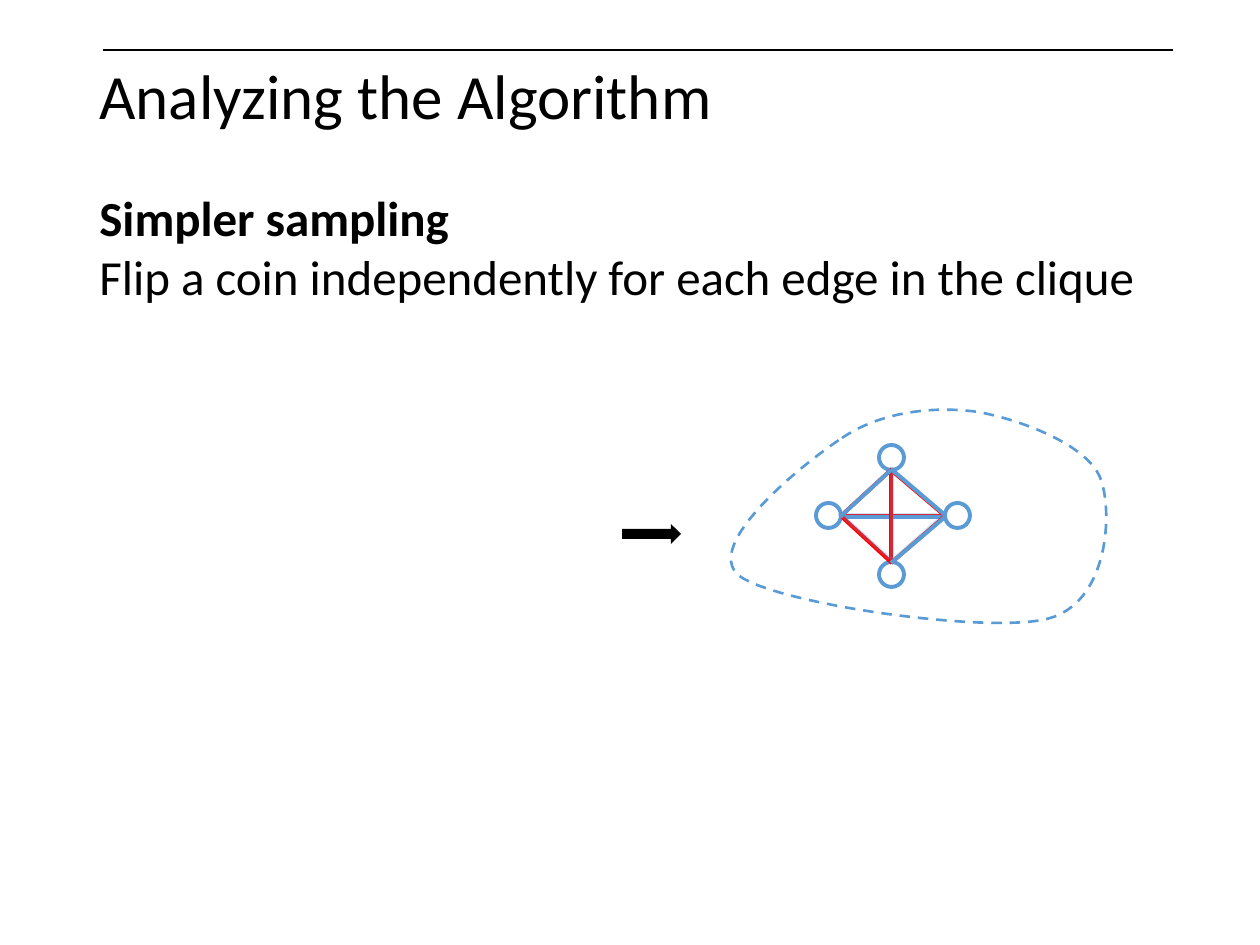
import dataclasses
import typing

import lxml.etree
import pptx
import pptx.dml.color
import pptx.enum.dml
import pptx.enum.shapes
import pptx.enum.text
import pptx.oxml.ns
import pptx.util

EMU_PER_PX = 914400 / 126
BLACK, WHITE, RED, BLUE = "000000", "FFFFFF", "FF0000", "5B9BD5"
NODE_SIZE = 25

Point = tuple[int, int]


@dataclasses.dataclass
class Edge:
    start: Point
    end: Point
    colour: str = BLUE
    opacity: int = 100
    width: float = 2.25


@dataclasses.dataclass
class TextLine:
    text: str
    size: int
    bold: bool = False
    spacing: float = 1.0


RULE = Edge((103, 50), (1173, 50), BLACK, width=1)
HORIZONTAL_EDGES = [
    Edge((840, 516), (944, 516), RED),
    Edge((839, 515), (942, 515), opacity=25),
    Edge((842, 517), (945, 517)),
]
NODES = [(879, 445), (816, 503), (945, 503), (879, 562)]
SAMPLED_EDGES = [
    Edge((842, 517), (892, 563), RED),
    Edge((944, 517), (891, 563), RED),
    Edge((891, 470), (891, 563), RED),
    Edge((944, 515), (891, 470), RED),
]
CLIQUE_EDGES = [
    Edge((892, 469), (842, 515), RED),
    Edge((839, 513), (890, 559), opacity=25),
    Edge((944, 515), (891, 562), opacity=25),
    Edge((892, 467), (892, 559), opacity=25),
    Edge((945, 515), (892, 469), opacity=25),
    Edge((891, 470), (840, 517), opacity=25),
    Edge((945, 517), (891, 563)),
    Edge((945, 515), (891, 469)),
    Edge((891, 470), (840, 517)),
]
REGION_START = (842, 438)
REGION_CURVES = [
    ((882, 411), (935, 406), (978, 412)),
    ((1022, 420), (1090, 446), (1101, 480)),
    ((1113, 514), (1108, 604), (1047, 619)),
    ((987, 634), (774, 604), (738, 575)),
    ((704, 544), (801, 465), REGION_START),
]


def px(value: float) -> int:
    """Turn px into EMU."""
    return round(value * EMU_PER_PX)


def rgb(colour: str) -> pptx.dml.color.RGBColor:
    """Turn a hex string into a colour."""
    return pptx.dml.color.RGBColor.from_string(colour)


def add_edge(slide: typing.Any, edge: Edge) -> None:
    """Draw a straight line, translucent if its opacity is below 100."""
    line = slide.shapes.add_connector(
        pptx.enum.shapes.MSO_CONNECTOR.STRAIGHT,
        *map(px, edge.start + edge.end),
    )
    line.line.color.rgb = rgb(edge.colour)
    line.line.width = pptx.util.Pt(edge.width)
    properties = line._element.spPr
    if edge.opacity < 100:
        colour = properties.find(".//" + pptx.oxml.ns.qn("a:srgbClr"))
        alpha = lxml.etree.SubElement(colour, pptx.oxml.ns.qn("a:alpha"))
        alpha.set("val", str(edge.opacity * 1000))
    lxml.etree.SubElement(properties, pptx.oxml.ns.qn("a:effectLst"))


def add_filled(slide: typing.Any, kind: typing.Any, at: tuple[int, int, int, int],
               fill: str, outline: str | None = None) -> None:
    """Draw a preset shape with a solid fill and an optional outline."""
    shape = slide.shapes.add_shape(kind, *map(px, at))
    shape.shadow.inherit = False
    shape.fill.solid()
    shape.fill.fore_color.rgb = rgb(fill)
    if outline:
        shape.line.color.rgb = rgb(outline)
        shape.line.width = pptx.util.Pt(2.25)
    else:
        shape.line.fill.background()


def add_text(slide: typing.Any, at: tuple[int, int, int, int], lines: list[TextLine],
             anchor: typing.Any) -> None:
    """Write one paragraph for each line in a wrapping box."""
    frame = slide.shapes.add_textbox(*map(px, at)).text_frame
    frame.word_wrap = True
    frame.vertical_anchor = anchor
    for index, line in enumerate(lines):
        para = frame.add_paragraph() if index else frame.paragraphs[0]
        para.text = line.text
        para.line_spacing = line.spacing
        para.font.name = "Calibri"
        para.font.size = pptx.util.Pt(line.size)
        para.font.bold = line.bold
        para.font.color.rgb = rgb(BLACK)


def curve_points(start: Point, first: Point, second: Point, end: Point,
                 steps: int = 24) -> list[tuple[float, float]]:
    """Sample a cubic curve, leaving out its start."""
    points = []
    for step in range(1, steps + 1):
        t = step / steps
        weights = ((1 - t) ** 3, 3 * t * (1 - t) ** 2, 3 * t * t * (1 - t), t ** 3)
        x, y = (sum(w * c for w, c in zip(weights, axis))
                for axis in zip(start, first, second, end))
        points.append((x, y))
    return points


def add_region(slide: typing.Any) -> None:
    """Draw the dashed outline around the clique."""
    points, start = [], REGION_START
    for curve in REGION_CURVES:
        points += curve_points(start, *curve)
        start = curve[-1]
    builder = slide.shapes.build_freeform(*map(px, REGION_START))
    builder.add_line_segments([(px(x), px(y)) for x, y in points], close=True)
    region = builder.convert_to_shape()
    region.shadow.inherit = False
    region.fill.background()
    region.line.color.rgb = rgb(BLUE)
    region.line.width = pptx.util.Pt(1.5)
    region.line.dash_style = pptx.enum.dml.MSO_LINE.DASH


def main() -> None:
    """Build the slide and save it."""
    deck = pptx.Presentation()
    deck.slide_width, deck.slide_height = px(1260), px(945)
    slide = deck.slides.add_slide(deck.slide_layouts[6])
    shapes = pptx.enum.shapes.MSO_SHAPE
    anchors = pptx.enum.text.MSO_ANCHOR

    add_edge(slide, RULE)
    add_text(slide, (87, 8, 1086, 183),
             [TextLine("Analyzing the Algorithm", 36, spacing=0.9)], anchors.MIDDLE)
    add_text(slide, (87, 181, 1086, 745), [
        TextLine("Simpler sampling", 28, bold=True),
        TextLine("Flip a coin independently for each edge in the clique", 28),
    ], anchors.TOP)
    for edge in HORIZONTAL_EDGES:
        add_edge(slide, edge)
    for left, top in NODES:
        add_filled(slide, shapes.OVAL, (left, top, NODE_SIZE, NODE_SIZE), WHITE, BLUE)
    for edge in SAMPLED_EDGES:
        add_edge(slide, edge)
    add_region(slide)
    add_filled(slide, shapes.RIGHT_ARROW, (622, 524, 59, 20), BLACK)
    for edge in CLIQUE_EDGES:
        add_edge(slide, edge)
    deck.save("out.pptx")


if __name__ == "__main__":
    main()
